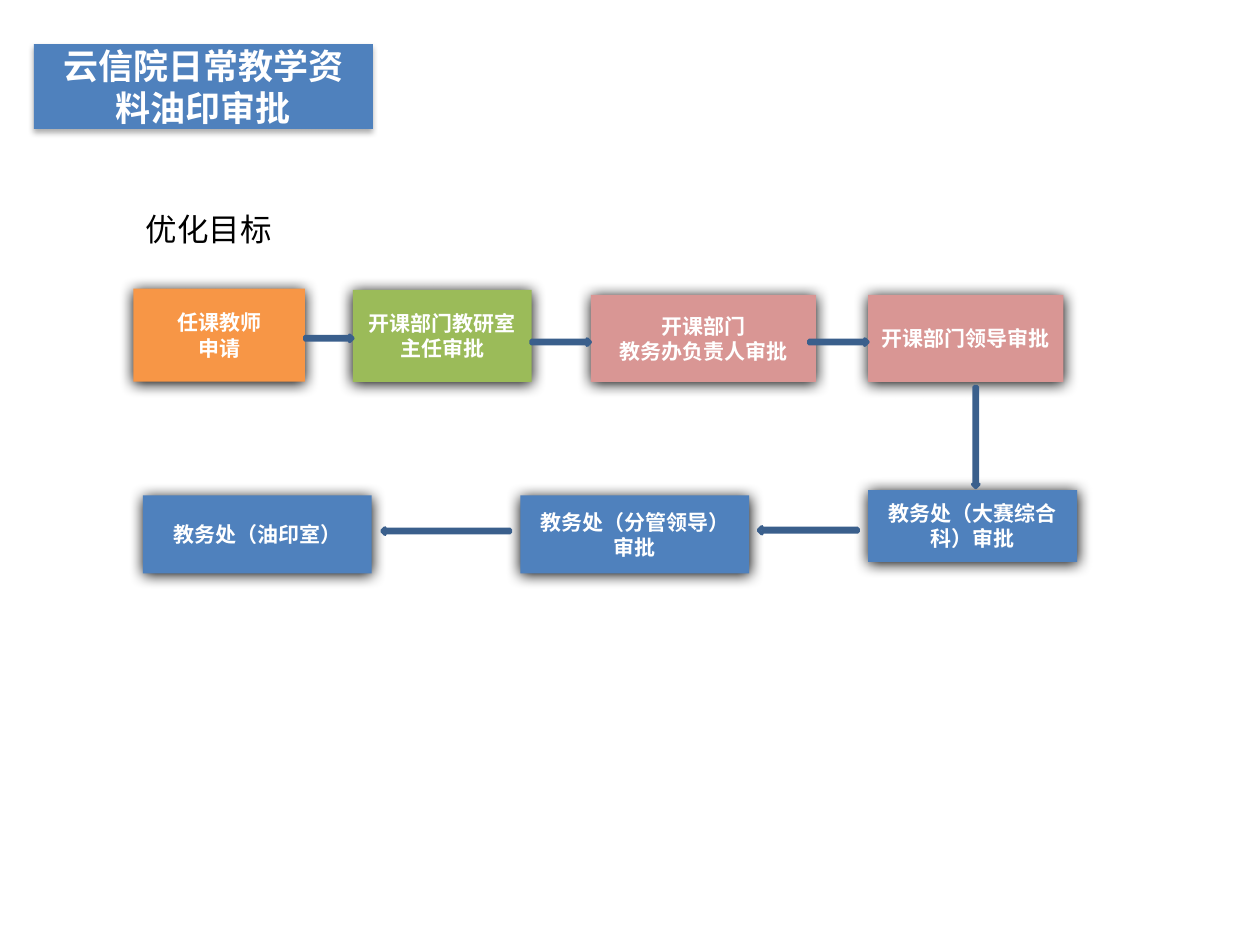
from lxml.etree import SubElement
from pptx import Presentation
from pptx.dml.color import RGBColor
from pptx.enum.shapes import MSO_SHAPE
from pptx.enum.text import MSO_ANCHOR, MSO_AUTO_SIZE, PP_ALIGN
from pptx.oxml.ns import qn
from pptx.util import Pt

BLUE, ORANGE, GREEN, PINK = "4F81BD", "F79646", "9BBB59", "D99694"
ARROW_LINE = "3A5F8C"


def write_text(sp, text, size=12, color="FFFFFF", bold=True, align=PP_ALIGN.CENTER):
    tf = sp.text_frame
    tf.text = text
    tf.word_wrap = True
    tf.vertical_anchor = MSO_ANCHOR.MIDDLE
    for p in tf.paragraphs:
        p.alignment = align
        for r in p.runs:
            r.font.name = "Calibri"
            r.font.size = Pt(size)
            r.font.bold = bold
            r.font.color.rgb = RGBColor.from_string(color)


def add_shape(kind, box, fill, line=None, shadow=None):
    sp = s.shapes.add_shape(kind, *map(Pt, box))
    sp.shadow.inherit = False
    sp.fill.solid()
    sp.fill.fore_color.rgb = RGBColor.from_string(fill)
    if line:
        sp.line.color.rgb = RGBColor.from_string(line)
        sp.line.width = Pt(2)
    else:
        sp.line.fill.background()
    if shadow:
        alpha, blur, dist = shadow
        effects = sp._element.spPr.find(qn("a:effectLst"))
        outer = SubElement(effects, qn("a:outerShdw"), blurRad=str(Pt(blur)),
                           dist=str(Pt(dist)), dir="5400000", rotWithShape="0")
        clr = SubElement(outer, qn("a:srgbClr"), val="000000")
        SubElement(clr, qn("a:alpha"), val=str(alpha * 1000))
    return sp


prs = Presentation()
prs.slide_width, prs.slide_height = Pt(720), Pt(540)
s = prs.slides.add_slide(prs.slide_layouts[6])

# Title banner
sp = add_shape(MSO_SHAPE.RECTANGLE, (19.4, 25.2, 193.7, 48.5), BLUE, shadow=(32, 3.5, 2.2))
write_text(sp, "云信院日常教学资料油印审批", size=20)

# Section heading
sp = s.shapes.add_textbox(Pt(76.3), Pt(116.6), Pt(87.1), Pt(29))
write_text(sp, "优化目标", size=18, color="000000", bold=False, align=PP_ALIGN.LEFT)
sp.text_frame.vertical_anchor = MSO_ANCHOR.TOP
sp.text_frame.word_wrap = False
sp.text_frame.auto_size = MSO_AUTO_SIZE.SHAPE_TO_FIT_TEXT

# Approval steps, in order of the flow
steps = [
    ("任课教师\n申请", ORANGE, (76.3, 164.9, 97.9, 53.3)),
    ("开课部门教研室主任审批", GREEN, (201.6, 165.6, 102.2, 52.6)),
    ("开课部门\n教务办负责人审批", PINK, (337.7, 168.5, 128.5, 49.7)),
    ("开课部门领导审批", PINK, (496.1, 168.5, 111.6, 49.7)),
    ("教务处（大赛综合科）审批", BLUE, (496.1, 280.1, 119.5, 41)),
    ("教务处（分管领导）\n审批", BLUE, (297.4, 283, 130.7, 44.6)),
    ("教务处（油印室）", BLUE, (81.7, 283, 130.7, 44.6)),
]
for text, fill, box in steps:
    sp = add_shape(MSO_SHAPE.RECTANGLE, box, fill, shadow=(100, 8.5, 1))
    write_text(sp, text)

# Arrows between the steps
arrows = [
    (MSO_SHAPE.RIGHT_ARROW, (174.2, 191.5, 27.4, 3.6)),
    (MSO_SHAPE.RIGHT_ARROW, (303.5, 193.7, 33.8, 3.6)),
    (MSO_SHAPE.RIGHT_ARROW, (462.2, 193.7, 33.8, 3.6)),
    (MSO_SHAPE.DOWN_ARROW, (555.8, 221, 3.6, 57.6)),
    (MSO_SHAPE.LEFT_ARROW, (433.4, 301, 56.9, 4)),
    (MSO_SHAPE.LEFT_ARROW, (218.2, 301.7, 73.4, 3.6)),
]
for kind, box in arrows:
    add_shape(kind, box, BLUE, line=ARROW_LINE)

prs.save("out.pptx")
